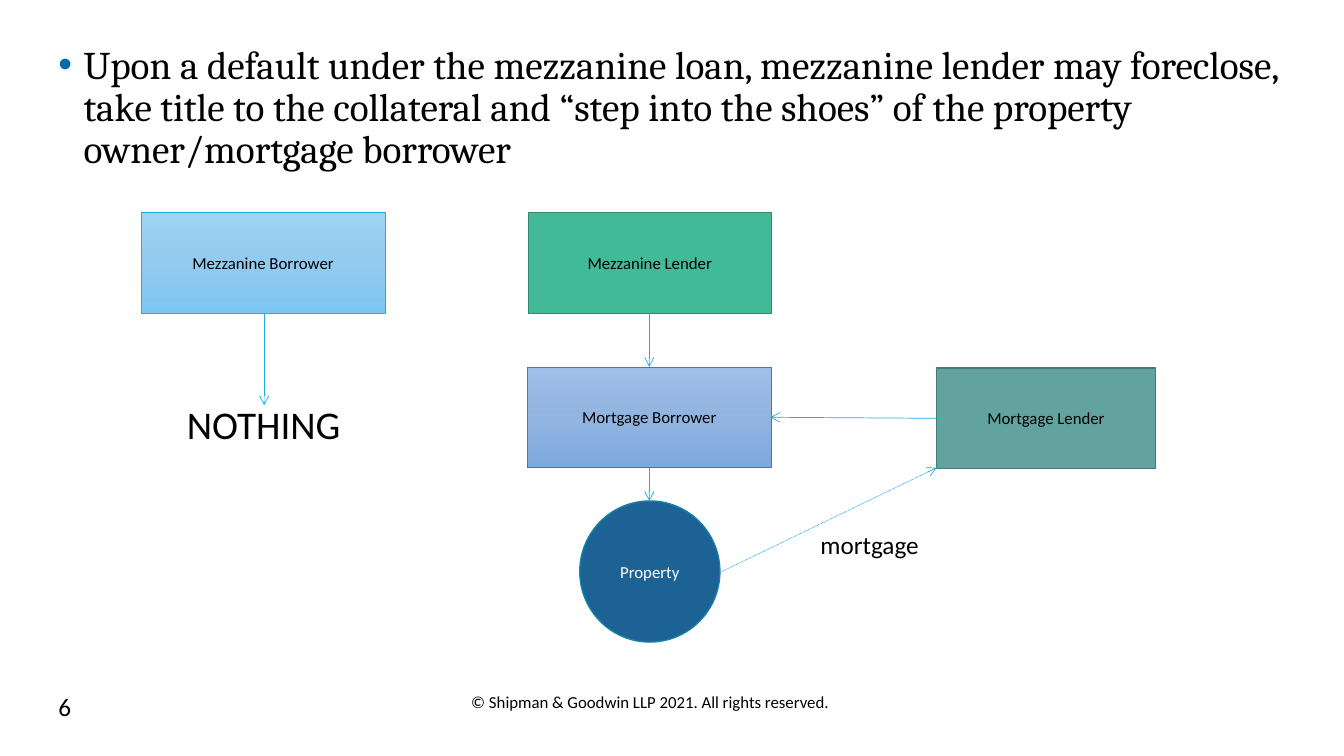
from copy import deepcopy
from pptx import Presentation
from pptx.util import Inches, Pt
from pptx.dml.color import RGBColor
from pptx.enum.dml import MSO_LINE
from pptx.enum.shapes import MSO_CONNECTOR, MSO_SHAPE
from pptx.enum.text import MSO_ANCHOR, PP_ALIGN
from pptx.oxml.ns import qn
from pptx.oxml.xmlchemy import OxmlElement

# Content
WIDE, HIGH = 13.33, 7.5
BULLET = ("Upon a default under the mezzanine loan, mezzanine lender may foreclose, "
          "take title to the collateral and “step into the shoes” of the property "
          "owner/mortgage borrower")
BLUE = "1CADE4"
TOP, MID, TALL = 2.11, 3.64, 1.0
LEFT, AXIS, RIGHT = 2.62, 6.44, 9.29
BASE = MID + TALL
ROUND = 4.97

# name: shape, left, top, width, height, fills, line colour, line width, text colour
NODES = {
    "Mezzanine Lender": ("RECTANGLE", 5.24, TOP, 2.41, TALL, ["42BA97"], "318A70", 1, "000000"),
    "Mezzanine Borrower": ("RECTANGLE", 1.4, TOP, 2.42, TALL,
                           ["A0D3F2", "92CBEF", "7EC6F1"], BLUE, 0.5, "000000"),
    "Mortgage Borrower": ("RECTANGLE", 5.23, MID, 2.42, TALL,
                          ["9FBEE8", "92B4E0", "7EA9E0"], "2683C6", 0.5, "000000"),
    "Property": ("OVAL", 5.75, ROUND, 1.39, 1.4, ["1D6294"], "1580A9", 1, "FFFFFF"),
    "Mortgage Lender": ("RECTANGLE", RIGHT, 3.65, 2.17, TALL, ["62A39F"], "497976", 1, "000000"),
}
# from x, from y, to x, to y, dotted
ARROWS = [
    (LEFT, TOP + TALL, LEFT, 4.02, False),
    (AXIS, BASE, AXIS, ROUND, False),
    (AXIS, TOP + TALL, AXIS, MID, False),
    (7.16, 5.67, RIGHT, BASE, True),
    (RIGHT, 4.15, 7.64, 4.14, False),
]
# text, left, top, width, height, size, font, alignment
LABELS = [
    (BULLET, 0.48, 0.4, 12.42, 4.88, 28, "Cambria", "LEFT"),
    ("© Shipman & Goodwin LLP 2021. All rights reserved.",
     4.2, 6.81, 4.5, 0.4, 12, "Calibri", "CENTER"),
    ("6", 0.48, 6.81, 3, 0.4, 18, "Calibri", "LEFT"),
    ("NOTHING", 1.74, 3.92, 1.75, 0.57, 28, "Calibri", "CENTER"),
    ("mortgage", 7.75, 5.2, 1.75, 0.4, 18, "Calibri", "CENTER"),
]


def tint(code):
    return RGBColor.from_string(code)


def tag(host, name, **attrs):
    part = OxmlElement(name)
    for key, value in attrs.items():
        part.set(key, value)
    host.append(part)
    return part


def write(shape, text, size, font, color, align):
    frame = shape.text_frame
    frame.word_wrap = True
    para = frame.paragraphs[0]
    para.alignment = getattr(PP_ALIGN, align)
    run = para.add_run()
    run.text = text
    style = {"size": Pt(size), "name": font}
    for key, value in style.items():
        setattr(run.font, key, value)
    run.font.color.rgb = tint(color)
    return para


def paint(shape, fills):
    fill = shape.fill
    if len(fills) == 1:
        fill.solid()
        fill.fore_color.rgb = tint(fills[0])
        return
    fill.gradient()
    fill.gradient_angle = 270
    stops = shape._element.spPr.find(".//" + qn("a:gsLst"))
    stops.insert(1, deepcopy(stops[0]))
    for i, (stop, code) in enumerate(zip(fill.gradient_stops, fills)):
        stop.position = i / (len(fills) - 1)
        stop.color.rgb = tint(code)


deck = Presentation()
deck.slide_width, deck.slide_height = Inches(WIDE), Inches(HIGH)
slide = deck.slides.add_slide(deck.slide_layouts[6])
shapes = slide.shapes

# Text boxes, with the bullet on the first
for text, *area, size, font, align in LABELS:
    box = shapes.add_textbox(*map(Inches, area))
    para = write(box, text, size, font, "000000", align)
    if text == BULLET:
        para.line_spacing = 0.9
        props = para._p.get_or_add_pPr()
        props.set("marL", str(Inches(0.25)))
        props.set("indent", str(-Inches(0.25)))
        tag(tag(props, "a:buClr"), "a:srgbClr", val="006BA4")
        tag(props, "a:buFont", typeface="Arial")
        tag(props, "a:buChar", char="•")

# Parties and property
for name, (kind, *area, fills, edge, width, color) in NODES.items():
    node = shapes.add_shape(getattr(MSO_SHAPE, kind), *map(Inches, area))
    node.shadow.inherit = False
    paint(node, fills)
    node.line.color.rgb = tint(edge)
    node.line.width = Pt(width)
    node.text_frame.vertical_anchor = MSO_ANCHOR.MIDDLE
    write(node, name, 12, "Calibri", color, "CENTER")

# Arrows
for *ends, dotted in ARROWS:
    arrow = shapes.add_connector(MSO_CONNECTOR.STRAIGHT, *map(Inches, ends))
    arrow.line.color.rgb = tint(BLUE)
    arrow.line.width = Pt(0.5)
    if dotted:
        arrow.line.dash_style = MSO_LINE.ROUND_DOT
    tag(arrow.line._get_or_add_ln(), "a:tailEnd", type="arrow")
    tag(arrow._element.spPr, "a:effectLst")

deck.save("out.pptx")
